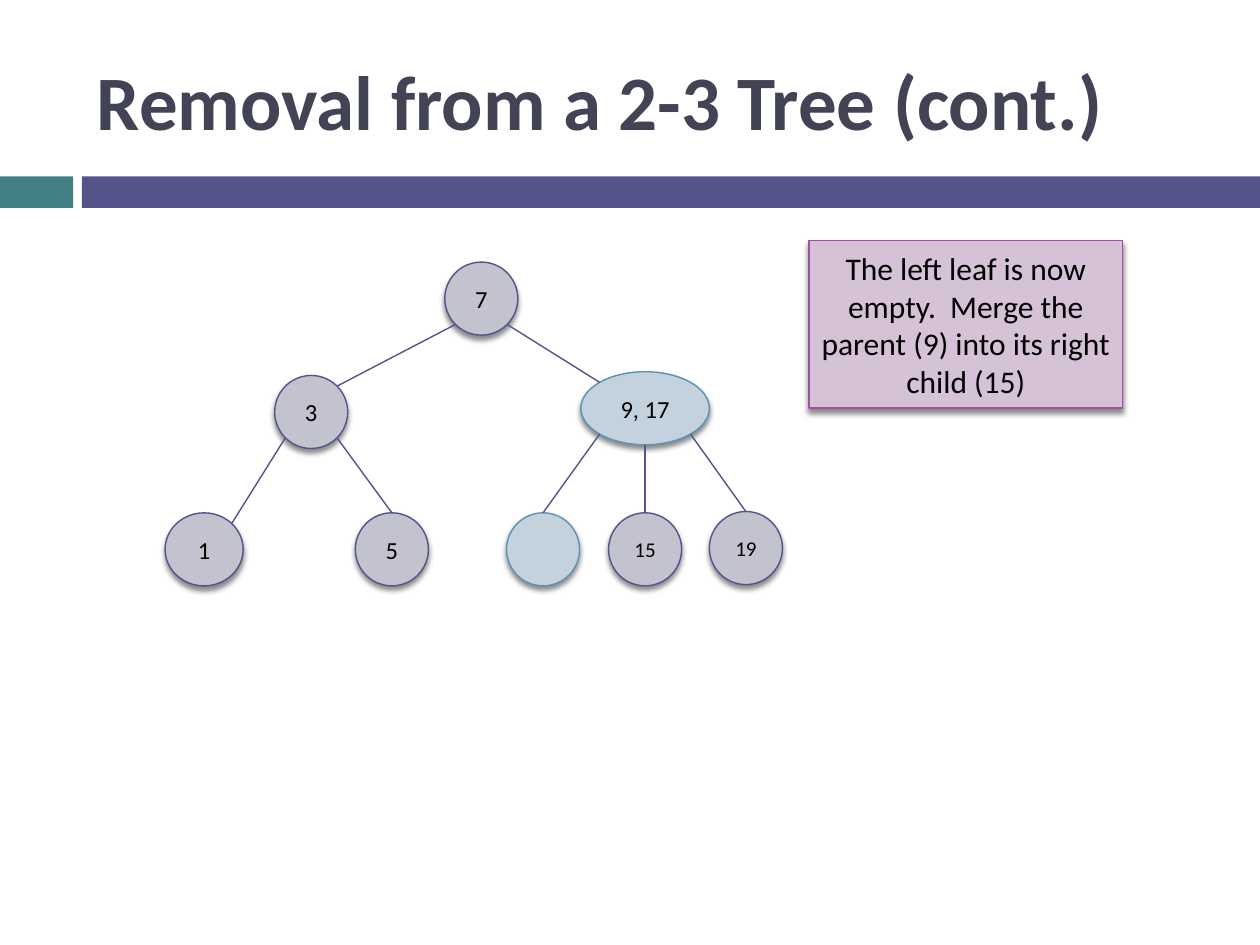
import pptx
import pptx.util
import pptx.dml.color
import pptx.enum.shapes
import pptx.enum.text
import lxml.etree

COLORS = {
    "teal": "438086", "indigo": "53548A", "title": "424456", "text": "000000",
    "gray": "C3C3CF", "blue": "C4D2DE", "blue line": "5C92B5",
    "pink": "D6C2D7", "purple": "A04DA3", "shadow": "000000",
}
RGB = {key: pptx.dml.color.RGBColor.from_string(value) for key, value in COLORS.items()}
SHAPES = pptx.enum.shapes.MSO_SHAPE
ALIGN = pptx.enum.text.PP_ALIGN
LINE_WIDTH = pptx.util.Pt(0.79)
A = "http://schemas.openxmlformats.org/drawingml/2006/main"
SHADOW = (
    f'<a:effectLst xmlns:a="{A}"><a:outerShdw blurRad="38100" dist="30480" dir="5400000" '
    f'rotWithShape="0"><a:srgbClr val="{COLORS["shadow"]}"><a:alpha val="45000"/></a:srgbClr>'
    "</a:outerShdw></a:effectLst>"
)

deck = pptx.Presentation()
deck.slide_width, deck.slide_height = pptx.util.Inches(10), pptx.util.Inches(7.5)
slide = deck.slides.add_slide(deck.slide_layouts[6])
UNIT = deck.slide_width / 100  # the slide is a grid of 100 columns and 75 rows


def grid(*cells):
    return [round(cell * UNIT) for cell in cells]


def add_label(box, text, *, kind=None, size=14, bold=False, color="text",
              align=ALIGN.CENTER, fill=None, line=None):
    """Add a text box, or a preset shape if kind is given; an outlined one casts a shadow."""
    if kind is None:
        label = slide.shapes.add_textbox(*grid(*box))
    else:
        label = slide.shapes.add_shape(kind, *grid(*box))
        label.shadow.inherit = False
        label.fill.solid()
        label.fill.fore_color.rgb = RGB[fill]
        if line:
            label.line.color.rgb = RGB[line]
            label.line.width = LINE_WIDTH
            properties = label._element.spPr
            properties.remove(properties.find(f"{{{A}}}effectLst"))
            properties.append(lxml.etree.fromstring(SHADOW))
        else:
            label.line.fill.background()
    if text:
        frame = label.text_frame
        frame.word_wrap = True
        frame.vertical_anchor = pptx.enum.text.MSO_ANCHOR.MIDDLE
        paragraph = frame.paragraphs[0]
        paragraph.alignment = align
        run = paragraph.add_run()
        run.text = text
        run.font.name = "Calibri"
        run.font.size = pptx.util.Pt(size)
        run.font.bold = bold
        run.font.color.rgb = RGB[color]


# Header
add_label((0, 14, 5.8, 2.5), "", kind=SHAPES.RECTANGLE, fill="teal")
add_label((6.5, 14, 93.5, 2.5), "", kind=SHAPES.RECTANGLE, fill="indigo")
add_label((6.7, 2.5, 89.2, 10.8), "Removal from a 2-3 Tree (cont.)",
          size=44, bold=True, color="title", align=ALIGN.LEFT)

# Tree: centre column, centre row, width, text, text size, fill, line
NODE = 5.8
nodes = {
    "root": (38.2, 23.7, NODE, "7", 14, "gray", "indigo"),
    "left": (24.7, 32.7, NODE, "3", 14, "gray", "indigo"),
    "right": (51.2, 32.4, 10.2, "9, 17", 14, "blue", "blue line"),
    "one": (16.2, 43.6, 6.2, "1", 14, "gray", "indigo"),
    "five": (31.1, 43.6, NODE, "5", 14, "gray", "indigo"),
    "empty": (43.1, 43.6, NODE, "", 14, "blue", "blue line"),
    "fifteen": (51.2, 43.6, NODE, "15", 12, "gray", "indigo"),
    "nineteen": (59.2, 43.5, NODE, "19", 12, "gray", "indigo"),
}
for column, row, width, key, size, fill, line in nodes.values():
    add_label((column - width / 2, row - NODE / 2, width, NODE), key,
              kind=SHAPES.OVAL, size=size, fill=fill, line=line)

# Branches: parent, side it leaves by, child, side it enters by (-1 left, 0 middle, 1 right)
branches = [
    ("root", -1, "left", 1), ("root", 1, "right", -1),
    ("left", -1, "one", 1), ("left", 1, "five", 0),
    ("right", -1, "empty", 0), ("right", 0, "fifteen", 0), ("right", 1, "nineteen", 0),
]
DIAGONAL = 0.5 ** 0.5
for parent, exit_side, child, entry_side in branches:
    ends = []
    for name, side, down in ((parent, exit_side, 1), (child, entry_side, -1)):
        column, row, width = nodes[name][:3]
        ends += [column + side * DIAGONAL * width / 2,
                 row + down * (DIAGONAL if side else 1) * NODE / 2]
    branch = slide.shapes.add_connector(pptx.enum.shapes.MSO_CONNECTOR.STRAIGHT, *grid(*ends))
    branch.line.color.rgb = RGB["indigo"]
    branch.line.width = LINE_WIDTH
    lxml.etree.SubElement(branch._element.spPr, f"{{{A}}}effectLst")

# Explanation
add_label((64.2, 19.1, 24.9, 13.3),
          "The left leaf is now empty.  Merge the parent (9) into its right child (15)",
          kind=SHAPES.RECTANGLE, size=18, fill="pink", line="purple")

deck.save("out.pptx")
